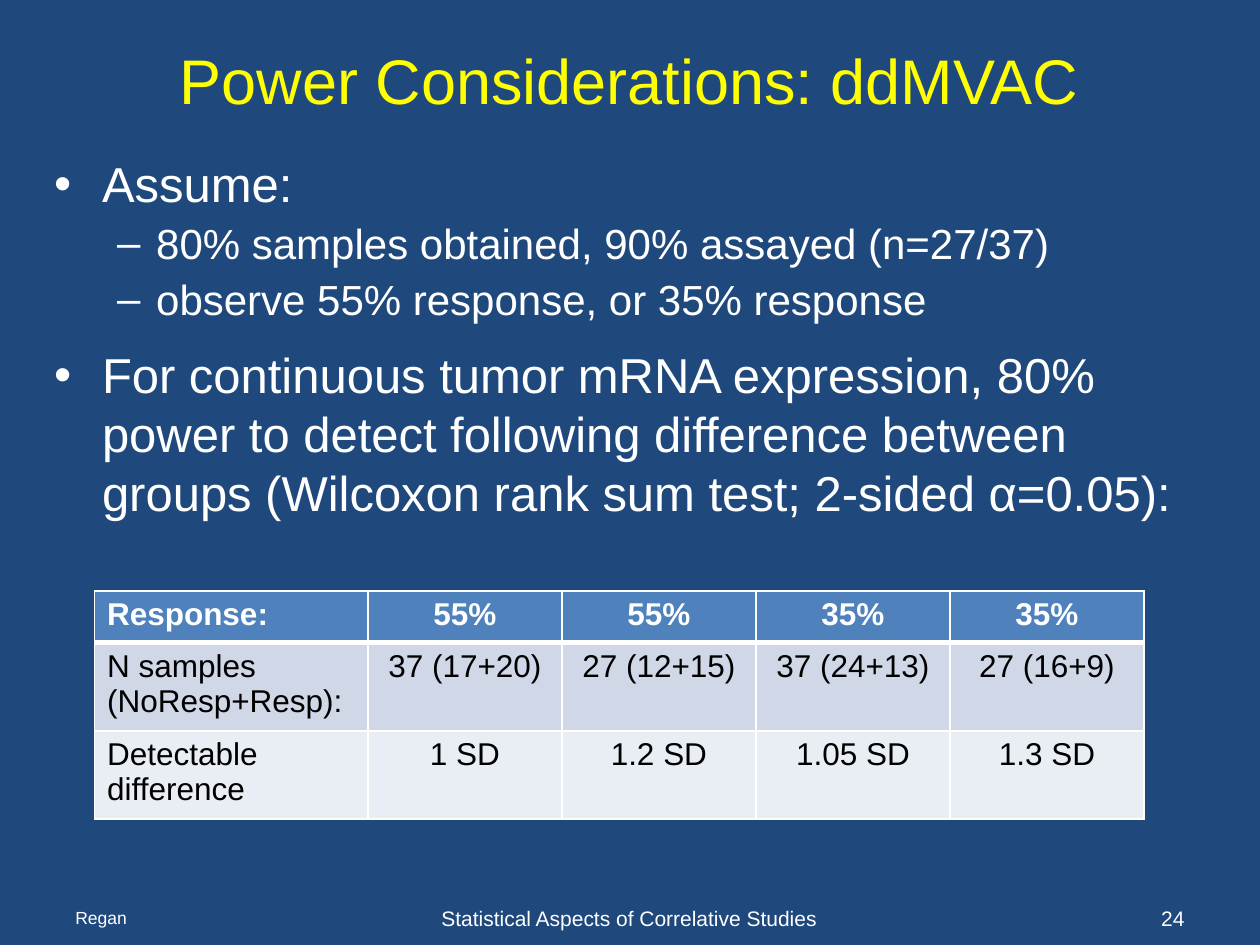
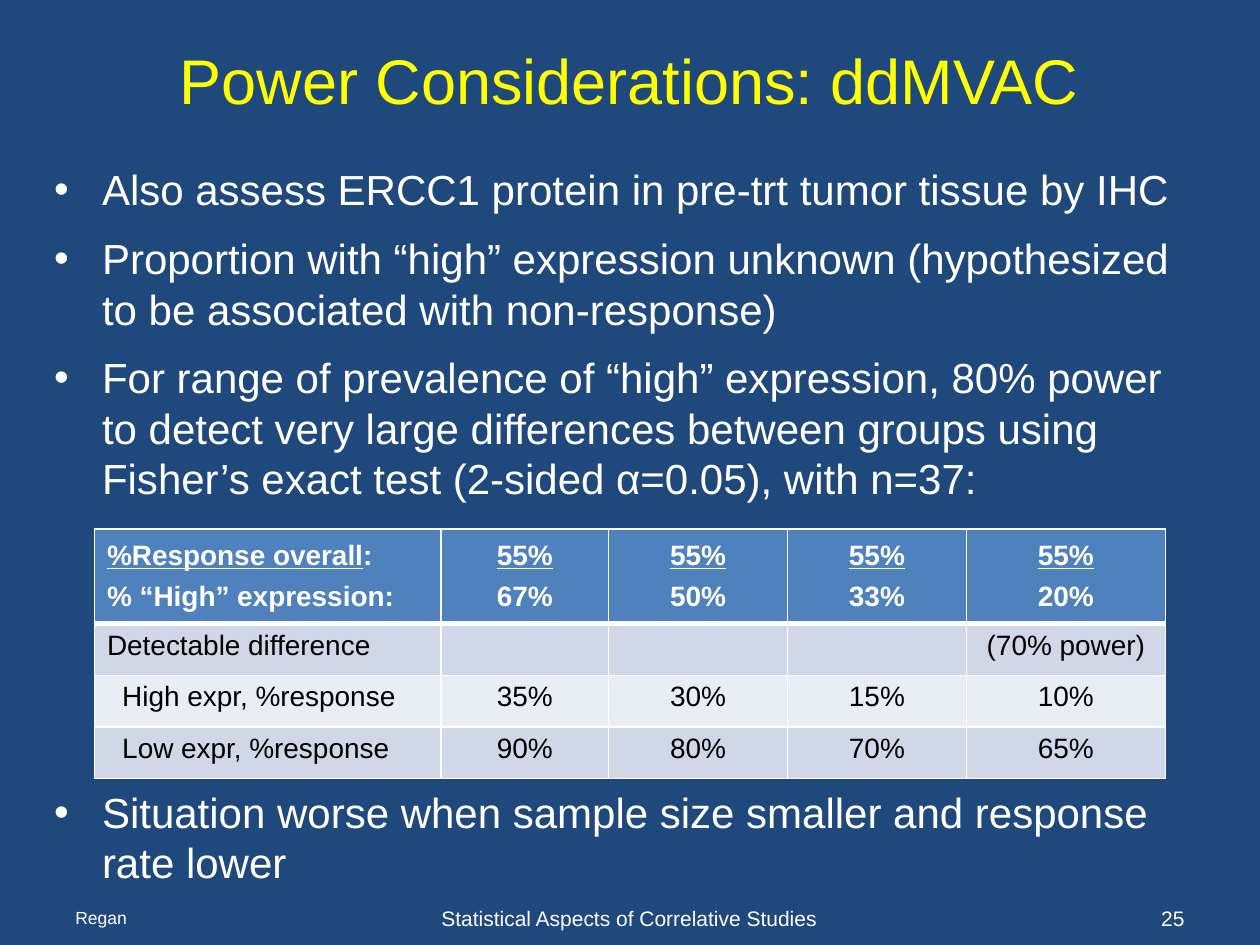
"""Build two slides on power considerations for the ddMVAC correlative study."""
import pptx
import pptx.dml.color
import pptx.enum.text
import pptx.oxml
import pptx.oxml.ns
import pptx.util

Inches, Pt = pptx.util.Inches, pptx.util.Pt
ALIGN = pptx.enum.text.PP_ALIGN
MIDDLE = pptx.enum.text.MSO_ANCHOR.MIDDLE
COLORS = {"background": "1F497D", "title": "FFFF00", "text": "FFFFFF", "header": "4F81BD",
          "odd_row": "D0D8E8", "even_row": "E9EDF4", "cell_text": "000000", "border": "FFFFFF"}
FONT = "Arial"
TITLE = "Power Considerations: ddMVAC"
FOOTER = "Statistical Aspects of Correlative Studies"
LEVELS = [("•", 0.38, -0.38), ("–", 0.81, -0.31)]


def format_runs(para, size, color, bold=False, align=ALIGN.LEFT):
    para.alignment = align
    for span in para.runs:
        span.font.name = FONT
        span.font.size = Pt(size)
        span.font.bold = bold
        span.font.color.rgb = pptx.dml.color.RGBColor.from_string(COLORS[color])


def set_border(cell, side, width):
    line = pptx.oxml.parse_xml(
        f'<a:ln{side} {pptx.oxml.ns.nsdecls("a")} w="{Pt(width)}"><a:solidFill>'
        f'<a:srgbClr val="{COLORS["border"]}"/></a:solidFill></a:ln{side}>')
    cell._tc.get_or_add_tcPr().insert("LRTB".index(side), line)


pages = [
    {"number": "24",
     "bullets": [
         {"text": "Assume:", "size": 28, "before": 3},
         {"text": "80% samples obtained, 90% assayed (n=27/37)", "level": 1, "before": 3},
         {"text": "observe 55% response, or 35% response", "level": 1, "before": 3},
         {"text": "For continuous tumor mRNA expression, 80% power to detect following "
                  "difference between groups (Wilcoxon rank sum test; 2-sided α=0.05):",
          "size": 28, "before": 12}],
     "top": 4.69, "size": 18,
     "widths": [2.17, 1.54, 1.54, 1.54, 1.54],
     "heights": [0.41, 0.41, 0.41],
     "indented": [],
     "rows": [
         ["Response:", "55%", "55%", "35%", "35%"],
         ["N samples (NoResp+Resp):", "37 (17+20)", "27 (12+15)", "37 (24+13)", "27 (16+9)"],
         ["Detectable difference", "1 SD", "1.2 SD", "1.05 SD", "1.3 SD"]]},
    {"number": "25",
     "bullets": [
         {"text": "Also assess ERCC1 protein in pre-trt tumor tissue by IHC",
          "spacing": 1.2, "after": 6},
         {"text": "Proportion with “high” expression unknown (hypothesized to be associated "
                  "with non-response)", "after": 6},
         {"text": "For range of prevalence of “high” expression, 80% power to detect very "
                  "large differences between groups using Fisher’s exact test "
                  "(2-sided α=0.05), with n=37:"},
         {"text": "Situation worse when sample size smaller and response rate lower",
          "before": 162}],
     "top": 4.2, "size": 16,
     "widths": [2.75, 1.33, 1.42, 1.42, 1.58],
     "heights": [0.75, 0.41, 0.41, 0.41],
     "indented": [2, 3],
     "rows": [
         ["%Response overall:\n% “High” expression:",
          "55%\n67%", "55%\n50%", "55%\n33%", "55%\n20%"],
         ["Detectable difference", "", "", "", "(70% power)"],
         ["High expr, %response", "35%", "30%", "15%", "10%"],
         ["Low expr, %response", "90%", "80%", "70%", "65%"]]},
]

deck = pptx.Presentation()
deck.slide_width, deck.slide_height = Inches(10), Inches(7.5)
backdrop = deck.slide_master.background.fill
backdrop.solid()
backdrop.fore_color.rgb = pptx.dml.color.RGBColor.from_string(COLORS["background"])

for content in pages:
    page = deck.slides.add_slide(deck.slide_layouts[1])
    title, body = page.shapes.title, page.placeholders[1]
    for holder, top, height in [(title, 0.17, 0.92), (body, 1.17, 5.83)]:
        holder.left, holder.top = Inches(0.33), Inches(top)
        holder.width, holder.height = Inches(9.33), Inches(height)
        holder.text_frame.auto_size = pptx.enum.text.MSO_AUTO_SIZE.NONE
    title.text_frame.text = TITLE
    title.text_frame.vertical_anchor = MIDDLE
    format_runs(title.text_frame.paragraphs[0], 36, "title", align=ALIGN.CENTER)

    body.text_frame.text = "\n".join(bullet["text"] for bullet in content["bullets"])
    for para, bullet in zip(body.text_frame.paragraphs, content["bullets"]):
        para.level = bullet.get("level", 0)
        para.line_spacing = bullet.get("spacing", 1.0)
        para.space_before = Pt(bullet.get("before", 4.5))
        para.space_after = Pt(bullet.get("after", 0))
        format_runs(para, bullet.get("size", 24), "text")
        mark, margin, indent = LEVELS[para.level]
        properties = para._p.get_or_add_pPr()
        properties.set("marL", str(Inches(margin)))
        properties.set("indent", str(Inches(indent)))
        properties.append(pptx.oxml.parse_xml(
            f'<a:buChar {pptx.oxml.ns.nsdecls("a")} char="{mark}"/>'))

    for text, left, width, size, align in [
            ("Regan", 0.5, 2.33, 10, ALIGN.LEFT),
            (FOOTER, 3.33, 3.33, 12, ALIGN.CENTER),
            (content["number"], 7.17, 2.33, 12, ALIGN.RIGHT)]:
        box = page.shapes.add_textbox(Inches(left), Inches(7.15), Inches(width), Inches(0.27))
        box.text_frame.word_wrap = True
        box.text_frame.vertical_anchor = MIDDLE
        box.text_frame.text = text
        format_runs(box.text_frame.paragraphs[0], size, "text", align=align)

    rows, widths, heights = content["rows"], content["widths"], content["heights"]
    table = page.shapes.add_table(
        len(rows), len(widths), Inches(0.75), Inches(content["top"]),
        Inches(sum(widths)), Inches(sum(heights))).table
    for column, width in zip(table.columns, widths):
        column.width = Inches(width)
    for row, height in zip(table.rows, heights):
        row.height = Inches(height)
    for row_index, values in enumerate(rows):
        is_header = row_index == 0
        fill = "header" if is_header else ("even_row", "odd_row")[row_index % 2]
        for column_index, value in enumerate(values):
            cell = table.cell(row_index, column_index)
            cell.fill.solid()
            cell.fill.fore_color.rgb = pptx.dml.color.RGBColor.from_string(COLORS[fill])
            for side in "LRTB":
                thick = (side, row_index) in [("B", 0), ("T", 1)]
                set_border(cell, side, 3 if thick else 1)
            cell.text_frame.text = value
            paras = cell.text_frame.paragraphs
            if len(paras) > 1:
                cell.vertical_anchor = MIDDLE
                label = paras[0].text
                paras[0].text = label.rstrip(":")
                paras[0].runs[0].font.underline = True
                if label.endswith(":"):
                    paras[0].add_run().text = ":"
            for para in paras:
                if len(paras) > 1:
                    para.space_before = Pt(6)
                format_runs(para, content["size"], "text" if is_header else "cell_text",
                            is_header, ALIGN.CENTER if column_index else ALIGN.LEFT)
            if column_index == 0 and row_index in content["indented"]:
                paras[0]._p.get_or_add_pPr().set("marL", str(Inches(0.12)))

deck.save("out.pptx")
